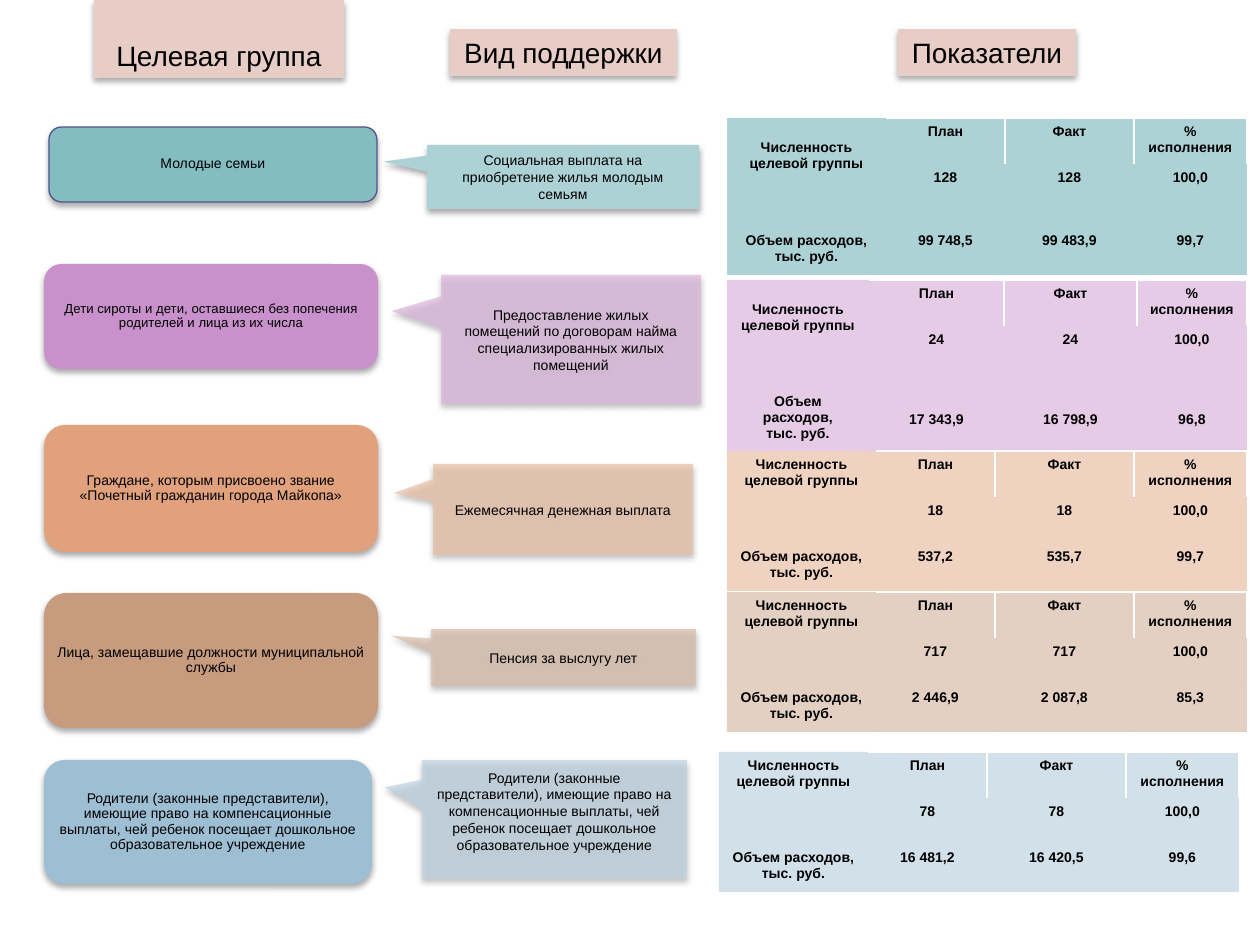
from lxml import etree
from pptx import Presentation
from pptx.dml.color import RGBColor
from pptx.enum.shapes import MSO_SHAPE
from pptx.enum.text import MSO_ANCHOR, PP_ALIGN
from pptx.oxml.ns import qn
from pptx.util import Emu, Pt

ROUND = MSO_SHAPE.ROUNDED_RECTANGLE
RECT = MSO_SHAPE.RECTANGLE
CALLOUT = MSO_SHAPE.RECTANGULAR_CALLOUT
CENTER = PP_ALIGN.CENTER
TOP, MIDDLE, BOTTOM = MSO_ANCHOR.TOP, MSO_ANCHOR.MIDDLE, MSO_ANCHOR.BOTTOM
PLAIN_TABLE = "{2D5ABB26-0587-4C30-8999-92F81FD0307C}"
PAD_X, PAD_Y = 12, 6


def px(n):
    return Emu(round(n * 914400 / 126))


def color(value):
    return RGBColor.from_string(value)


def set_fill(fill, value, alpha=100):
    fill.solid()
    fill.fore_color.rgb = color(value)
    if alpha < 100:
        clr = fill._xPr.find(qn("a:solidFill"))[0]
        etree.SubElement(clr, qn("a:alpha"), val=str(alpha * 1000))


class Board:
    font = "Arial"
    ink = "000000"
    header_fill = "E7CDC6"

    def __init__(self, prs):
        self.s = prs.slides.add_slide(prs.slide_layouts[6])

    def set_text(self, tf, text, size, bold=False, spacing=None):
        tf.text = text
        tf.word_wrap = True
        for p in tf.paragraphs:
            p.alignment = CENTER
            if spacing:
                p.line_spacing = spacing
            for r in p.runs:
                r.font.name = self.font
                r.font.size = Pt(size)
                r.font.bold = bold
                r.font.color.rgb = color(self.ink)

    def box(self, kind, at, fill, alpha=100):
        sp = self.s.shapes.add_shape(kind, *map(px, at))
        set_fill(sp.fill, fill, alpha)
        sp.line.fill.background()
        sp.shadow.inherit = False
        effects = sp._element.spPr.find(qn("a:effectLst"))
        shadow = etree.SubElement(effects, qn("a:outerShdw"), blurRad="44450",
                                  dist="27940", dir="5400000", rotWithShape="0")
        clr = etree.SubElement(shadow, qn("a:srgbClr"), val="000000")
        etree.SubElement(clr, qn("a:alpha"), val="32000")
        return sp

    def header(self, at, text, anchor=MIDDLE):
        sp = self.box(RECT, at, self.header_fill)
        self.set_text(sp.text_frame, text, 16)
        sp.text_frame.vertical_anchor = anchor

    def group(self, at, fill, text, size=8, line=None):
        sp = self.box(ROUND, at, fill)
        if line:
            sp.line.color.rgb = color(line)
            sp.line.width = Pt(0.75)
        tf = sp.text_frame
        self.set_text(tf, text, size, spacing=0.9)
        tf.vertical_anchor = MIDDLE
        tf.margin_left = tf.margin_right = px(4)
        tf.margin_top = tf.margin_bottom = px(3)

    def callout(self, at, tip, fill, alpha, text, bottom=PAD_Y):
        sp = self.box(CALLOUT, at, fill, alpha)
        sp.adjustments[0], sp.adjustments[1] = tip
        self.set_text(sp.text_frame, text, 8)
        sp.text_frame.vertical_anchor = MIDDLE
        sp.text_frame.margin_bottom = px(bottom)

    def cell(self, c, text, fill, alpha, top=PAD_Y, anchor=TOP):
        self.set_text(c.text_frame, text, 8, bold=True)
        set_fill(c.fill, fill, alpha)
        c.margin_left = c.margin_right = px(PAD_X)
        c.margin_top, c.margin_bottom = px(top), px(PAD_Y)
        c.vertical_anchor = anchor

    def borders(self, c, sides):
        for i, side in enumerate(sides):
            ln = etree.Element(qn("a:ln" + side), w="12700")
            clr = etree.SubElement(ln, qn("a:solidFill"))
            etree.SubElement(clr, qn("a:srgbClr"), val="FFFFFF")
            c._tc.get_or_add_tcPr().insert(i, ln)

    def table(self, left, top, cols, rows, fill, alpha, people, costs,
              label_top=PAD_Y, cost_label="Объем расходов, тыс. руб."):
        frame = self.s.shapes.add_table(3, 4, px(left), px(top),
                                        px(sum(cols)), px(sum(rows)))
        t = frame.table
        t.first_row = t.horz_banding = False
        t._tbl.tblPr.find(qn("a:tableStyleId")).text = PLAIN_TABLE
        for col, width in zip(t.columns, cols):
            col.width = px(width)
        for row, height in zip(t.rows, rows):
            row.height = px(height)
        t.cell(0, 0).merge(t.cell(1, 0))
        self.cell(t.cell(0, 0), "Численность целевой группы", fill, alpha, label_top)
        self.cell(t.cell(2, 0), cost_label, fill, alpha)
        cost_anchor = MIDDLE if "\n" in cost_label else TOP
        set_fill(t.cell(1, 0).fill, fill, alpha)
        lines = [("План", "Факт", "% исполнения"), people, costs]
        for i, values in enumerate(lines):
            for j, value in enumerate(values, 1):
                anchor = cost_anchor if i == 2 else TOP
                self.cell(t.cell(i, j), value, fill, alpha, anchor=anchor)
        for j in range(1, 4):
            self.borders(t.cell(0, j), "RT" if j == 1 else "LRT")


PARENTS = ("Родители (законные представители), имеющие право на компенсационные "
           "выплаты, чей ребенок посещает дошкольное образовательное учреждение")
COLS = (149, 119, 139, 113)
ROWS = (46, 46, 48)

HEADERS = [
    ((94, 0, 250, 78), "Целевая группа", BOTTOM),
    ((450, 29, 227, 47), "Вид поддержки"),
    ((898, 29, 178, 47), "Показатели"),
]
GROUPS = [
    ((49, 127, 328, 75), "83BCC1", "Молодые семьи", 8, "53548A"),
    ((44, 264, 334, 105), "C991CB",
     "Дети сироты и дети, оставшиеся без попечения родителей и лица из их числа", 7.5),
    ((44, 425, 334, 127), "E1A17C",
     "Граждане, которым присвоено звание «Почетный гражданин города Майкопа»"),
    ((44, 593, 334, 135), "C69B7E", "Лица, замещавшие должности муниципальной службы"),
    ((44, 760, 328, 124), "9DBED3", PARENTS),
]
CALLOUTS = [
    ((427, 145, 272, 64), (-0.66, -0.24), "ADD2D6", 100,
     "Социальная выплата на приобретение жилья молодым семьям"),
    ((441, 275, 260, 129), (-0.69, -0.22), "DBB6DC", 70,
     "Предоставление жилых помещений по договорам найма "
     "специализированных жилых помещений"),
    ((433, 464, 260, 91), (-0.65, -0.18), "EBC0A7", 70, "Ежемесячная денежная выплата"),
    ((431, 629, 265, 57), (-0.65, -0.38), "D9BDA9", 70, "Пенсия за выслугу лет"),
    ((422, 760, 265, 119), (-0.64, -0.27), "BED3E1", 70, PARENTS, 23),
]
TABLES = [
    (727, 118, (159, 119, 129, 113), (46, 63, 48), "ADD2D6", 100,
     ("128", "128", "100,0"), ("99 748,5", "99 483,9", "99,7"), 22),
    (727, 280, (142, 135, 133, 110), (46, 62, 63), "DBB6DC", 70,
     ("24", "24", "100,0"), ("17 343,9", "16 798,9", "96,8"), 22,
     "Объем расходов,\nтыс. руб."),
    (727, 451, COLS, ROWS, "EBC0A7", 70,
     ("18", "18", "100,0"), ("537,2", "535,7", "99,7")),
    (727, 592, COLS, ROWS, "D9BDA9", 70,
     ("717", "717", "100,0"), ("2 446,9", "2 087,8", "85,3")),
    (719, 752, COLS, ROWS, "BED3E1", 70,
     ("78", "78", "100,0"), ("16 481,2", "16 420,5", "99,6")),
]


def main():
    prs = Presentation()
    prs.slide_width, prs.slide_height = px(1260), px(945)
    board = Board(prs)
    for draw, items in ((board.group, GROUPS), (board.header, HEADERS),
                        (board.callout, CALLOUTS), (board.table, TABLES)):
        for item in items:
            draw(*item)
    prs.save("out.pptx")


if __name__ == "__main__":
    main()
